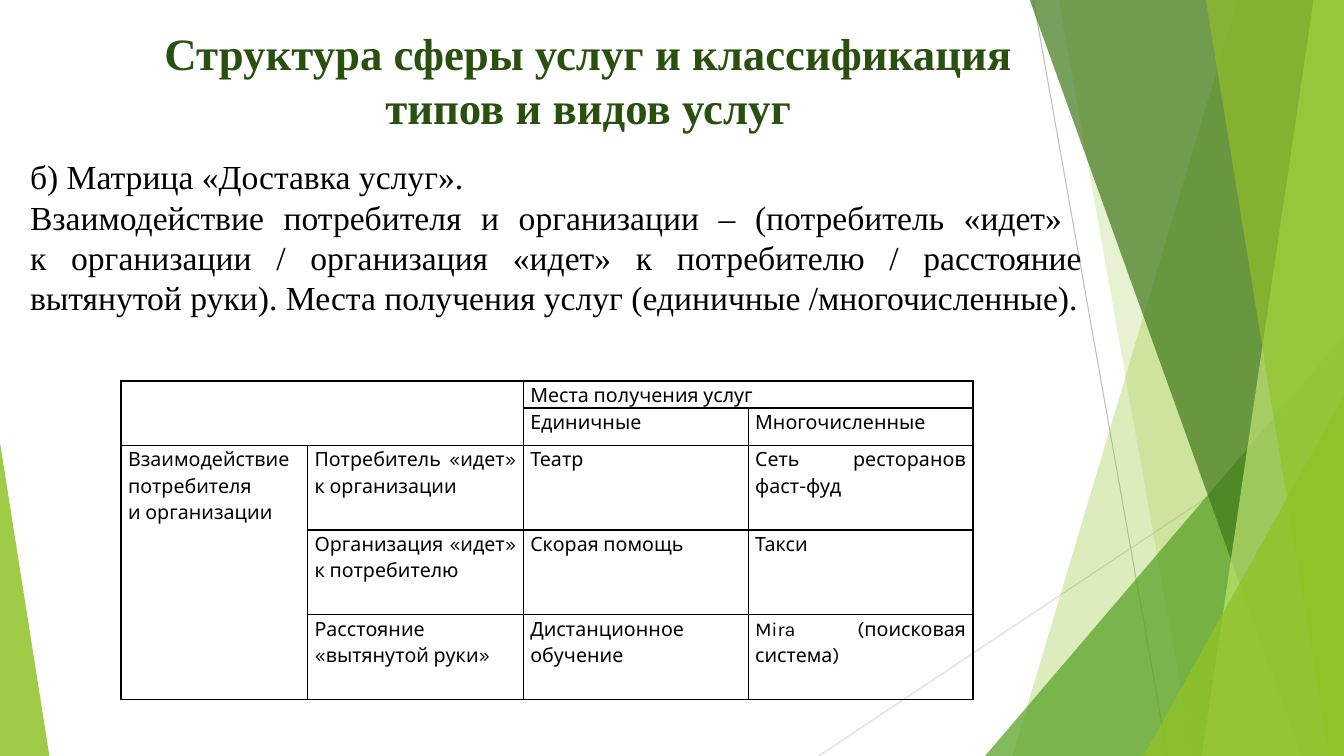
"""Build a slide with the service delivery matrix on a faceted green background."""
import dataclasses

import lxml.etree
import pptx
import pptx.dml.color
import pptx.enum.shapes
import pptx.enum.text
import pptx.oxml.ns
import pptx.util

Inches = pptx.util.Inches
Pt = pptx.util.Pt
Align = pptx.enum.text.PP_ALIGN
qn = pptx.oxml.ns.qn


@dataclasses.dataclass(frozen=True)
class Theme:
    width: float = 13.33
    height: float = 7.5
    title_font: str = "Times New Roman"
    table_font: str = "Karla"
    title_size: int = 32
    body_size: int = 24
    table_size: int = 14
    title_colour: str = "2A5010"
    ink: str = "000000"
    lime: str = "90C226"
    green: str = "54A021"
    forest: str = "3F7819"
    pale: str = "C0E474"
    grey: str = "BFBFBF"
    light_grey: str = "D9D9D9"


THEME = Theme()
TITLE = "Структура сферы услуг и классификация типов и видов услуг"
BODY = (
    "б) Матрица «Доставка услуг».\n"
    "Взаимодействие потребителя и организации – (потребитель «идет» \v"
    "к организации / организация «идет» к потребителю / расстояние "
    "вытянутой руки). Места получения услуг (единичные /многочисленные)."
)
COLUMNS = (1.85, 2.14, 2.23, 2.23)
ROWS = (0.26, 0.37, 0.84, 0.84, 0.84)
MERGES = (((0, 0), (1, 1)), ((0, 2), (0, 3)), ((2, 0), (4, 0)))
MATRIX = (
    ("", "", "Места получения услуг", ""),
    ("", "", "Единичные", "Многочисленные"),
    ("Взаимодействие потребителя\nи организации", "Потребитель «идет» к организации",
     "Театр", "Сеть ресторанов фаст-фуд"),
    ("", "Организация «идет» к потребителю", "Скорая помощь", "Такси"),
    ("", "Расстояние «вытянутой руки»", "Дистанционное обучение",
     "Mira (поисковая система)"),
)


def rgb(colour):
    return pptx.dml.color.RGBColor.from_string(colour)


def paint(shape, colour, opacity):
    shape.shadow.inherit = False
    shape.line.fill.background()
    shape.fill.solid()
    shape.fill.fore_color.rgb = rgb(colour)
    tint = shape.element.spPr.find(".//" + qn("a:srgbClr"))
    lxml.etree.SubElement(tint, qn("a:alpha"), val=str(opacity * 1000))


def add_ribbon(page, top_x, bottom_x, colour, opacity):
    top, bottom = Inches(-0.01), Inches(THEME.height)
    right = Inches(THEME.width)
    builder = page.shapes.build_freeform(Inches(top_x), top)
    builder.add_line_segments(
        [(right, top), (right, bottom), (Inches(bottom_x), bottom)], close=True
    )
    paint(builder.convert_to_shape(), colour, opacity)


def add_corner(page, left, width, height, apex, colour, opacity):
    triangle = page.shapes.add_shape(
        pptx.enum.shapes.MSO_SHAPE.ISOSCELES_TRIANGLE,
        Inches(left), Inches(THEME.height - height), Inches(width), Inches(height),
    )
    triangle.adjustments[0] = apex
    paint(triangle, colour, opacity)


def add_hairline(page, start, end, colour):
    line = page.shapes.add_connector(
        pptx.enum.shapes.MSO_CONNECTOR.STRAIGHT,
        *(Inches(value) for value in start + end),
    )
    line.line.color.rgb = rgb(colour)
    line.line.width = Pt(0.75)
    lxml.etree.SubElement(line.element.spPr, qn("a:effectLst"))


def add_background(page):
    add_hairline(page, (10.25, 0), (11.58, 7.5), THEME.grey)
    add_hairline(page, (13.33, 4.03), (8.12, 7.5), THEME.light_grey)
    add_ribbon(page, 12.28, 10.04, THEME.lime, 30)
    add_ribbon(page, 10.5, 11.83, THEME.lime, 20)
    add_corner(page, 9.77, 3.56, 4.17, 1, THEME.green, 72)
    add_ribbon(page, 10.21, 12.91, THEME.forest, 70)
    add_ribbon(page, 13.03, 11.92, THEME.pale, 70)
    add_ribbon(page, 11.96, 13.18, THEME.lime, 65)
    add_corner(page, 11.34, 1.99, 3.57, 1, THEME.lime, 80)
    add_corner(page, 0, 0.49, 3.11, 0, THEME.lime, 85)


def write(frame, text, font, size, colour, align, bold=False):
    frame.word_wrap = True
    frame.text = text
    for para in frame.paragraphs:
        para.alignment = align
        for span in para.runs:
            span.font.name = font
            span.font.size = Pt(size)
            span.font.bold = bold
            span.font.color.rgb = rgb(colour)


def place_title(page):
    title = page.shapes.title
    title.left, title.top = Inches(1.49), Inches(0.21)
    title.width, title.height = Inches(8.69), Inches(1.18)
    frame = title.text_frame
    write(frame, TITLE, THEME.title_font, THEME.title_size, THEME.title_colour,
          Align.CENTER, bold=True)
    frame.vertical_anchor = pptx.enum.text.MSO_ANCHOR.TOP
    frame.auto_size = pptx.enum.text.MSO_AUTO_SIZE.SHAPE_TO_FIT_TEXT
    page.shapes.element.append(title.element)


def add_body(page):
    box = page.shapes.add_textbox(Inches(0.2), Inches(1.5), Inches(10.63), Inches(1.72))
    write(box.text_frame, BODY, THEME.title_font, THEME.body_size, THEME.ink, Align.JUSTIFY)
    box.text_frame.auto_size = pptx.enum.text.MSO_AUTO_SIZE.SHAPE_TO_FIT_TEXT


def add_borders(cell):
    properties = cell._tc.get_or_add_tcPr()
    for side in ("a:lnL", "a:lnR", "a:lnT", "a:lnB"):
        edge = lxml.etree.SubElement(properties, qn(side), w=str(Pt(1)))
        fill = lxml.etree.SubElement(edge, qn("a:solidFill"))
        lxml.etree.SubElement(fill, qn("a:srgbClr"), val=THEME.ink)


def fill_cell(cell, text):
    add_borders(cell)
    cell.fill.background()
    cell.margin_left = cell.margin_right = Inches(0.07)
    cell.margin_top = cell.margin_bottom = 0
    write(cell.text_frame, text, THEME.table_font, THEME.table_size, THEME.ink, Align.JUSTIFY)
    for para in cell.text_frame.paragraphs:
        para.line_spacing = 1.15
        if not para.runs:
            lxml.etree.SubElement(para._p, qn("a:endParaRPr"), sz=str(THEME.table_size * 100))


def add_matrix(page):
    table = page.shapes.add_table(
        len(ROWS), len(COLUMNS), Inches(1.2), Inches(3.78),
        Inches(sum(COLUMNS)), Inches(sum(ROWS)),
    ).table
    table.first_row = table.horz_banding = False
    for column, width in zip(table.columns, COLUMNS):
        column.width = Inches(width)
    for row, height, texts in zip(table.rows, ROWS, MATRIX):
        row.height = Inches(height)
        for cell, text in zip(row.cells, texts):
            fill_cell(cell, text)
    for first, last in MERGES:
        table.cell(*first).merge(table.cell(*last))


def main():
    deck = pptx.Presentation()
    deck.slide_width, deck.slide_height = Inches(THEME.width), Inches(THEME.height)
    page = deck.slides.add_slide(deck.slide_layouts[5])
    add_background(page)
    place_title(page)
    add_body(page)
    add_matrix(page)
    deck.save("out.pptx")


if __name__ == "__main__":
    main()
